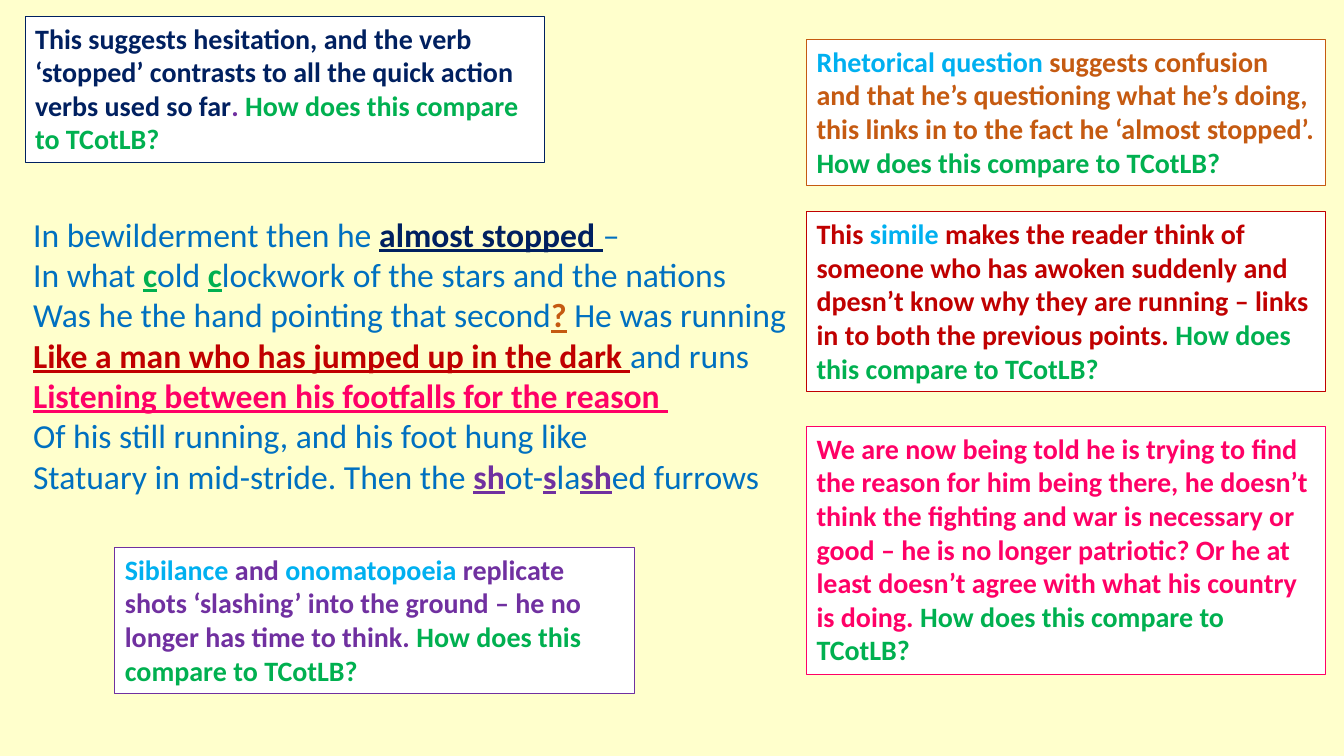
from pptx import Presentation
from pptx.dml.color import RGBColor
from pptx.enum.shapes import MSO_SHAPE
from pptx.enum.text import MSO_ANCHOR, PP_ALIGN
from pptx.util import Inches, Pt

CREAM, WHITE = "FFFFCC", "FFFFFF"
NAVY, BLUE, SKY, GREEN = "002060", "0070C0", "00B0F0", "00B050"
ORANGE, RED, PINK, PURPLE = "C55A11", "C00000", "FF0066", "7030A0"
QUESTION = ("How does this compare to TCotLB?", GREEN)
BREAK = ("\n", None)
NOTE_W = 5.15

POEM_BOX = (0.23, 2.07, 8.34, 2.93)
POEM = [
    [("In bewilderment then he ", BLUE), ("almost stopped ", NAVY), ("–", BLUE)],
    [("In what ", BLUE), ("c", GREEN), ("old ", BLUE), ("c", GREEN),
     ("lockwork of the stars and the nations", BLUE)],
    [("Was he the hand pointing that second", BLUE), ("?", ORANGE),
     (" He was running", BLUE)],
    [("Like a man who has jumped up in the dark ", RED), ("and runs ", BLUE), BREAK,
     ("Listening between his footfalls for the reason ", PINK)],
    [("Of his still running, and his foot hung like", BLUE)],
    [("Statuary in mid-stride. Then the ", BLUE), ("sh", PURPLE), ("ot-", BLUE),
     ("s", PURPLE), ("la", BLUE), ("sh", PURPLE), ("ed furrows", BLUE)],
]

NOTES = [
    (0.25, 0.16, 1.45, NAVY, [
        ("This suggests hesitation, and the verb ‘stopped’ contrasts to all the "
         "quick action verbs used so far", NAVY), (". ", PURPLE)]),
    (8, 0.39, 1.45, ORANGE, [
        ("Rhetorical question ", SKY),
        ("suggests confusion and that he’s questioning what he’s doing, this links "
         "in to the fact he ‘almost stopped’. ", ORANGE)]),
    (8, 2.1, 1.78, RED, [
        ("This ", RED), ("simile", SKY),
        (" makes the reader think of someone who has awoken suddenly and dpesn’t "
         "know why they are running – links in to both the previous points. ", RED)]),
    (8, 4.23, 2.46, PINK, [
        ("We are now being told he is trying to find the reason for him being there, "
         "he doesn’t think the fighting and war is necessary or good – he is no longer "
         "patriotic? Or he at least doesn’t agree with what his country is doing. ",
         PINK)]),
    (1.14, 5.43, 1.45, PURPLE, [
        ("Sibilance", SKY), (" and ", PURPLE), ("onomatopoeia", SKY),
        (" replicate shots ‘slashing’ into the ground – he no longer has time to "
         "think. ", PURPLE)]),
]


def rgb(color):
    return RGBColor.from_string(color)


def write(p, runs, size):
    p.alignment = PP_ALIGN.LEFT
    p.font.name, p.font.size = "Calibri", Pt(size)
    for text, color in runs:
        if text == "\n":
            p.add_line_break()
            continue
        r = p.add_run()
        r.text = text
        r.font.color.rgb = rgb(color)
        yield r, color


def add_poem(s):
    tf = s.shapes.add_textbox(*map(Inches, POEM_BOX)).text_frame
    tf.word_wrap = True
    for i, line in enumerate(POEM):
        p = tf.add_paragraph() if i else tf.paragraphs[0]
        for r, color in write(p, line, 24):
            if color != BLUE:
                r.font.bold = r.font.underline = True


def add_note(s, left, top, height, color, runs):
    sp = s.shapes.add_shape(MSO_SHAPE.RECTANGLE,
                            *map(Inches, (left, top, NOTE_W, height)))
    sp.shadow.inherit = False
    sp.fill.solid()
    sp.fill.fore_color.rgb = rgb(WHITE)
    sp.line.color.rgb = rgb(color)
    sp.line.width = Pt(0.75)
    tf = sp.text_frame
    tf.word_wrap = True
    tf.vertical_anchor = MSO_ANCHOR.TOP
    p = tf.paragraphs[0]
    p.font.bold = True
    list(write(p, runs + [QUESTION], 20))


def main():
    prs = Presentation()
    prs.slide_width, prs.slide_height = Inches(13.33), Inches(7.5)
    s = prs.slides.add_slide(prs.slide_layouts[6])
    s.background.fill.solid()
    s.background.fill.fore_color.rgb = rgb(CREAM)
    add_poem(s)
    for note in NOTES:
        add_note(s, *note)
    prs.save("out.pptx")


if __name__ == "__main__":
    main()
